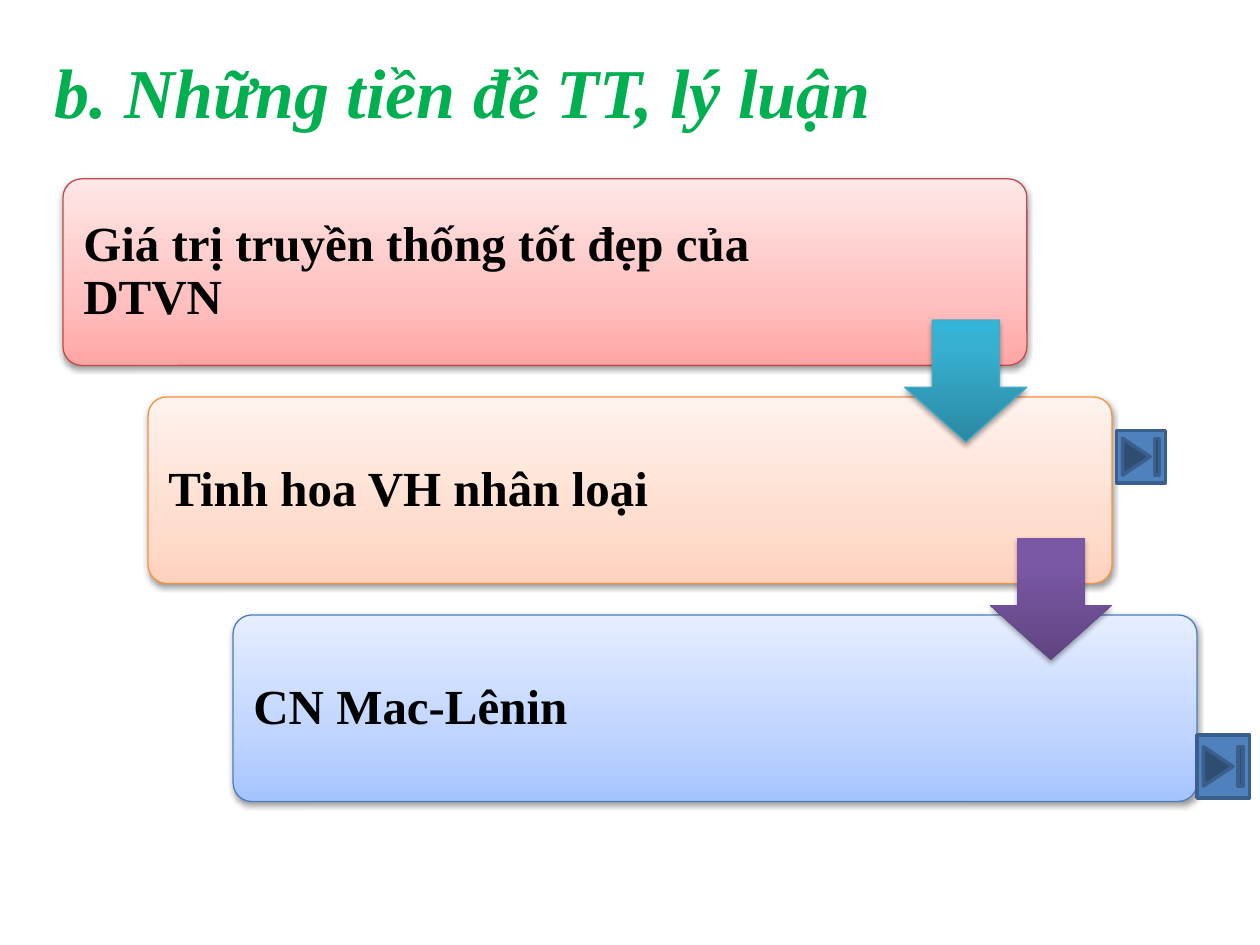
import copy

import pptx
import pptx.dml.color
import pptx.enum.shapes
import pptx.enum.text
import pptx.oxml
import pptx.oxml.ns
import pptx.util

Pt = pptx.util.Pt
RGB = pptx.dml.color.RGBColor.from_string
KIND = pptx.enum.shapes.MSO_SHAPE
qn = pptx.oxml.ns.qn

COLORS = {
    "title": "00B050", "text": "000000",
    "red line": "BF4C48", "orange line": "F69240", "blue line": "4B7EBC",
    "teal line": "46AAC5", "button": "4F81BD", "button line": "3A5F8C",
}
# Gradient stops from bottom to top
BLENDS = {
    "red": {0: "FFA6A5", 35: "FFC0BF", 100: "FFE7E7"},
    "orange": {0: "FFD2BD", 35: "FFDED0", 100: "FFF2ED"},
    "blue": {0: "A4C4FF", 35: "BFD4FF", 100: "E6EEFF"},
    "teal": {0: "2A88A2", 80: "37B1D2", 100: "34B4D6"},
    "purple": {0: "5F4480", 80: "7B58A6", 100: "7C57A8"},
}
STEP_X, STEP_Y = 48.6, 124.6


def add_block(kind, box, adjust, name, alpha, dist):
    """Add a preset shape with a three-stop gradient, outline and soft shadow."""
    shape = slide.shapes.add_shape(kind, *map(Pt, box))
    for i, value in enumerate(adjust):
        shape.adjustments[i] = value
    shape.fill.gradient()
    shape.fill.gradient_angle = 90
    props = shape._element.spPr
    stops = props.find(".//" + qn("a:gsLst"))
    stops.append(copy.deepcopy(stops[-1]))
    for stop, (place, color) in zip(shape.fill.gradient_stops, BLENDS[name].items()):
        stop.position = place / 100
        stop.color.rgb = RGB(color)
    # Theme tints left on the default stops would change the colours
    for color in stops.iter(qn("a:srgbClr")):
        for tint in list(color):
            color.remove(tint)
    line = COLORS.get(name + " line")
    if line:
        shape.line.color.rgb = RGB(line)
        shape.line.width = Pt(0.75)
    else:
        shape.line.fill.background()
    shape.shadow.inherit = False
    props.find(qn("a:effectLst")).append(pptx.oxml.parse_xml(
        '<a:outerShdw xmlns:a="http://schemas.openxmlformats.org/drawingml/2006/main"'
        f' blurRad="{Pt(3.1)}" dist="{Pt(dist)}" dir="5400000" rotWithShape="0">'
        f'<a:srgbClr val="000000"><a:alpha val="{alpha * 1000}"/></a:srgbClr>'
        '</a:outerShdw>'))


def add_text(box, text, inset, color, para, font):
    area = slide.shapes.add_textbox(*map(Pt, box))
    frame = area.text_frame
    frame.word_wrap = True
    for side, value in inset.items():
        setattr(frame, side, value)
    line = frame.paragraphs[0]
    for key, value in para.items():
        setattr(line, key, value)
    run = line.add_run()
    run.text = text
    for key, value in {"name": "Times New Roman", "bold": True, **font}.items():
        setattr(run.font, key, value)
    run.font.color.rgb = RGB(COLORS[color])


deck = pptx.Presentation()
deck.slide_width, deck.slide_height = Pt(720), Pt(540)
slide = deck.slides.add_slide(deck.slide_layouts[6])

add_text((24, 24, 672, 60), "b. Những tiền đề TT, lý luận", {}, "title",
         {"space_before": Pt(4.5)}, {"size": Pt(40), "italic": True})

inset = {"margin_" + side: Pt(8.6) for side in ("left", "top", "right", "bottom")}
inset["vertical_anchor"] = pptx.enum.text.MSO_ANCHOR.MIDDLE
panels = [
    ("red", "Giá trị truyền thống tốt đẹp của DTVN", 435.6),
    ("orange", "Tinh hoa VH nhân loại", 426.2),
    ("blue", "CN Mac-Lênin", 426.2),
]
for i, (name, text, width) in enumerate(panels):
    left, top = 36 + i * STEP_X, 102.2 + i * STEP_Y
    add_block(KIND.ROUNDED_RECTANGLE, (left, top, 550.8, 106.6), [0.1], name, 38, 1.6)
    add_text((left + 3, top + 3, width, 100.6), text, inset, "text",
             {"line_spacing": 0.9}, {"size": Pt(28)})

for i, name in enumerate(("teal", "purple")):
    box = (517 + i * STEP_X, 182.9 + i * STEP_Y, 69.8, 69.8)
    add_block(KIND.DOWN_ARROW, box, [0.55, 0.45], name, 35, 1.8)

for box in ((638, 246, 28, 30), (684, 420, 30, 36)):
    button = slide.shapes.add_shape(KIND.ACTION_BUTTON_END, *map(Pt, box))
    button.fill.solid()
    button.fill.fore_color.rgb = RGB(COLORS["button"])
    button.line.color.rgb = RGB(COLORS["button line"])
    button.line.width = Pt(2)
    button.shadow.inherit = False

deck.save("out.pptx")
